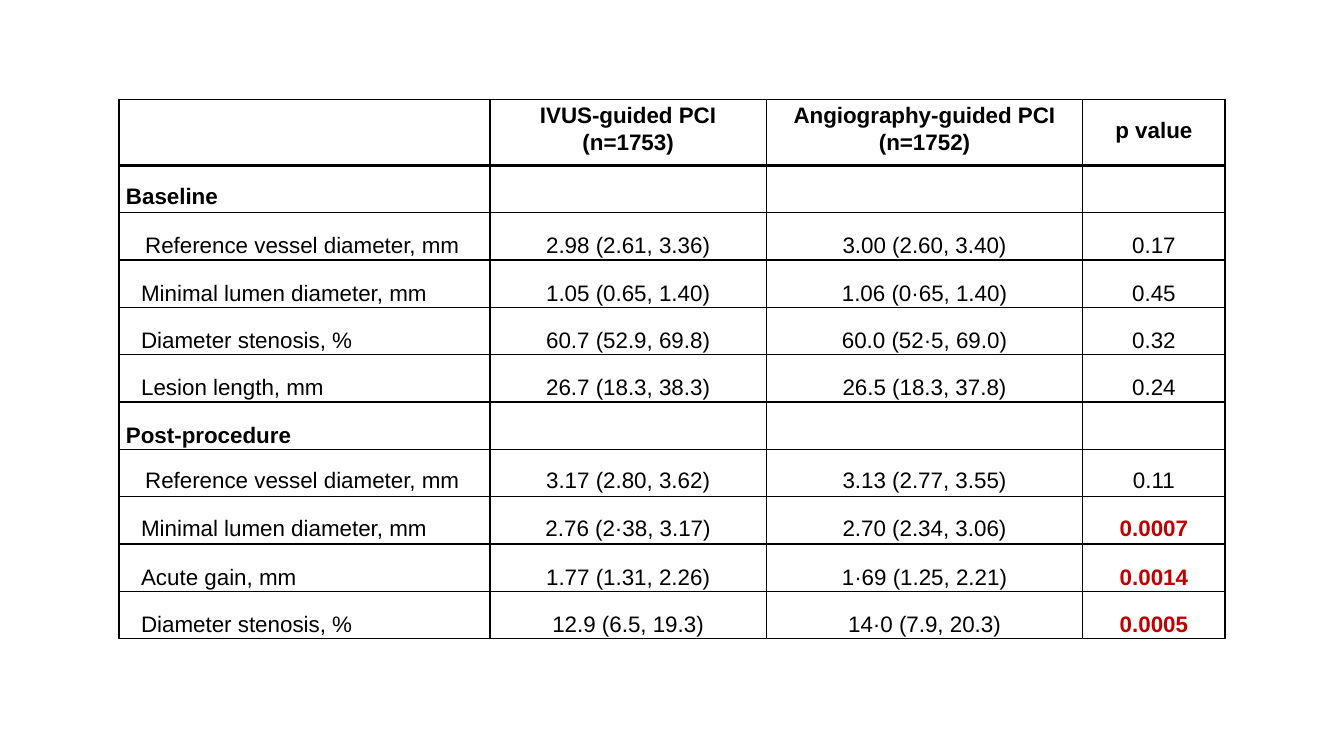
from lxml.etree import SubElement
from pptx import Presentation
from pptx.dml.color import RGBColor
from pptx.enum.text import MSO_ANCHOR, PP_ALIGN
from pptx.oxml.ns import qn
from pptx.util import Inches, Pt

COLORS = {"text": "000000", "line": "000000", "significant": "C00000"}
FONT = "Arial"
FONT_SIZE = 16
THIN, THICK = 1, 2.25

LEFT, TOP = 1.18, 0.99
COLUMN_WIDTHS = [3.68, 2.74, 3.14, 1.41]
HEADER_HEIGHT, ROW_HEIGHT = 0.65, 0.47
BODY_TOP_MARGIN = 0.19
EXACT_LINE = Pt(19.1)
SIGNIFICANCE_LEVEL = 0.05

HEADERS = ["", "IVUS-guided PCI (n=1753)", "Angiography-guided PCI (n=1752)", "p value"]
HEADER_TOP_MARGINS = [0, 0.01, 0.01, 0.18]
HEADER_SIDE_MARGIN = 0.2

# Label indent, line spacing, cell texts
ROWS = [
    (0.07, None, ["Baseline", "", "", ""]),
    (0.26, EXACT_LINE, ["Reference vessel diameter, mm", "2.98 (2.61, 3.36)", "3.00 (2.60, 3.40)", "0.17"]),
    (0.22, EXACT_LINE, ["Minimal lumen diameter, mm", "1.05 (0.65, 1.40)", "1.06 (0·65, 1.40)", "0.45"]),
    (0.22, EXACT_LINE, ["Diameter stenosis, %", "60.7 (52.9, 69.8)", "60.0 (52·5, 69.0)", "0.32"]),
    (0.22, EXACT_LINE, ["Lesion length, mm", "26.7 (18.3, 38.3)", "26.5 (18.3, 37.8)", "0.24"]),
    (0.07, EXACT_LINE, ["Post-procedure", "", "", ""]),
    (0.26, None, ["Reference vessel diameter, mm", "3.17 (2.80, 3.62)", "3.13 (2.77, 3.55)", "0.11"]),
    (0.22, None, ["Minimal lumen diameter, mm", "2.76 (2·38, 3.17)", "2.70 (2.34, 3.06)", "0.0007"]),
    (0.22, EXACT_LINE, ["Acute gain, mm", "1.77 (1.31, 2.26)", "1·69 (1.25, 2.21)", "0.0014"]),
    (0.22, EXACT_LINE, ["Diameter stenosis, %", "12.9 (6.5, 19.3)", "14·0 (7.9, 20.3)", "0.0005"]),
]


def set_borders(cell, top=THIN, bottom=THIN):
    properties = cell._tc.get_or_add_tcPr()
    for side, width in (("L", THIN), ("R", THIN), ("T", top), ("B", bottom)):
        line = SubElement(properties, qn(f"a:ln{side}"), w=str(Pt(width)))
        fill = SubElement(line, qn("a:solidFill"))
        SubElement(fill, qn("a:srgbClr"), val=COLORS["line"])


def set_margins(cell, left=0, top=0, right=0):
    cell.margin_left, cell.margin_top = Inches(left), Inches(top)
    cell.margin_right, cell.margin_bottom = Inches(right), 0


def write_cell(cell, text, align=PP_ALIGN.CENTER, bold=False, color="text", spacing=None):
    cell.text = text
    cell.vertical_anchor = MSO_ANCHOR.TOP
    paragraph = cell.text_frame.paragraphs[0]
    paragraph.alignment = align
    paragraph.line_spacing = spacing
    font = paragraph.font
    font.name, font.size, font.bold = FONT, Pt(FONT_SIZE), bold
    font.color.rgb = RGBColor.from_string(COLORS[color])


def fill_header(table):
    for column, (text, top_margin) in enumerate(zip(HEADERS, HEADER_TOP_MARGINS)):
        cell = table.cell(0, column)
        set_borders(cell, bottom=THICK)
        cell.fill.background()
        set_margins(cell, HEADER_SIDE_MARGIN, top_margin, HEADER_SIDE_MARGIN)
        write_cell(cell, text, bold=True, spacing=1.09 if column in (1, 2) else None)


def fill_body_row(table, row, indent, spacing, texts):
    is_section = not any(texts[1:])
    for column, text in enumerate(texts):
        cell = table.cell(row, column)
        set_borders(cell, top=THICK if row == 1 else THIN)
        cell.fill.background()
        is_label = column == 0
        set_margins(cell, indent if is_label else 0, BODY_TOP_MARGIN if text else 0)
        significant = column == 3 and text != "" and float(text) < SIGNIFICANCE_LEVEL
        write_cell(
            cell,
            text,
            align=PP_ALIGN.LEFT if is_label else PP_ALIGN.CENTER,
            bold=is_section or significant,
            color="significant" if significant else "text",
            spacing=spacing,
        )


def add_results_table(slide):
    heights = [HEADER_HEIGHT] + [ROW_HEIGHT] * len(ROWS)
    frame = slide.shapes.add_table(
        len(heights), len(COLUMN_WIDTHS), Inches(LEFT), Inches(TOP),
        Inches(sum(COLUMN_WIDTHS)), Inches(sum(heights)),
    )
    table = frame.table
    table.first_row = table.horz_banding = False
    for column, width in zip(table.columns, COLUMN_WIDTHS):
        column.width = Inches(width)
    for row, height in zip(table.rows, heights):
        row.height = Inches(height)
    fill_header(table)
    for row, (indent, spacing, texts) in enumerate(ROWS, start=1):
        fill_body_row(table, row, indent, spacing, texts)


def main():
    presentation = Presentation()
    presentation.slide_width, presentation.slide_height = Inches(13.33), Inches(7.5)
    slide = presentation.slides.add_slide(presentation.slide_layouts[6])
    add_results_table(slide)
    presentation.save("out.pptx")


if __name__ == "__main__":
    main()
